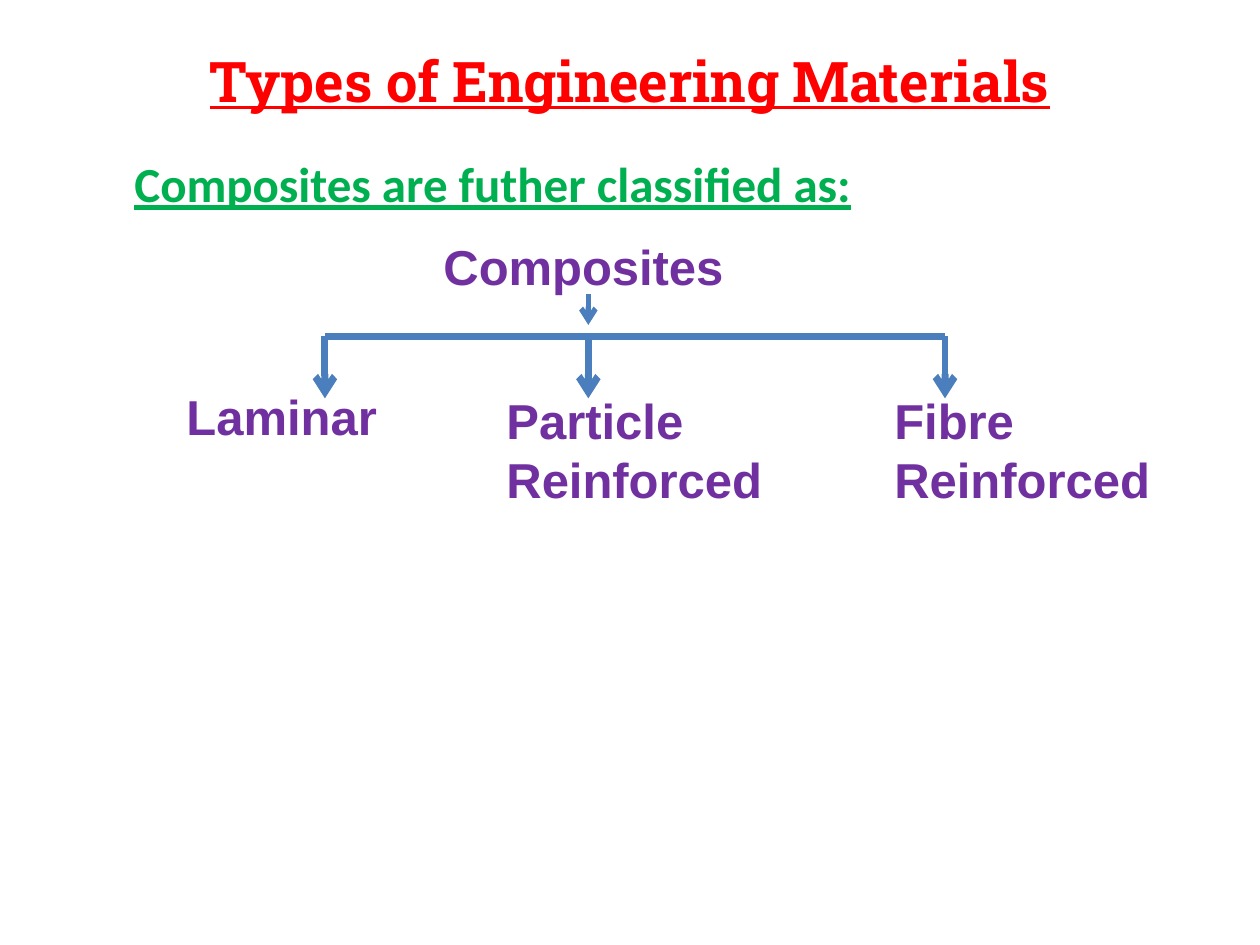
from dataclasses import dataclass

from pptx import Presentation
from pptx.dml.color import RGBColor
from pptx.enum.shapes import MSO_CONNECTOR
from pptx.enum.text import MSO_ANCHOR, PP_ALIGN
from pptx.oxml.ns import qn
from pptx.util import Cm, Pt
from lxml.etree import SubElement


@dataclass(frozen=True)
class Theme:
    title_color: RGBColor = RGBColor(0xFF, 0x00, 0x00)
    heading_color: RGBColor = RGBColor(0x00, 0xB0, 0x50)
    label_color: RGBColor = RGBColor(0x70, 0x30, 0xA0)
    line_color: RGBColor = RGBColor(0x4B, 0x7E, 0xBC)
    title_font: str = "Roboto Slab"
    heading_font: str = "Calibri"
    label_font: str = "Arial"
    title_size: int = 32
    text_size: int = 28
    branch_width: int = 4
    stem_width: int = 3


THEME = Theme()


def add_text(slide, lines, left, top, width, height, font=THEME.label_font,
             size=THEME.text_size, color=THEME.label_color, underline=False,
             align=PP_ALIGN.LEFT, anchor=MSO_ANCHOR.TOP):
    frame = slide.shapes.add_textbox(Cm(left), Cm(top), Cm(width), Cm(height)).text_frame
    frame.word_wrap = True
    frame.vertical_anchor = anchor
    frame.text = "\n".join(lines)
    for paragraph in frame.paragraphs:
        paragraph.alignment = align
        paragraph.font.name = font
        paragraph.font.size = Pt(size)
        paragraph.font.bold = True
        paragraph.font.underline = underline
        paragraph.font.color.rgb = color


def add_line(slide, x1, y1, x2, y2, width=THEME.branch_width, arrow=True):
    connector = slide.shapes.add_connector(
        MSO_CONNECTOR.STRAIGHT, Cm(x1), Cm(y1), Cm(x2), Cm(y2))
    connector.line.color.rgb = THEME.line_color
    connector.line.width = Pt(width)
    properties = connector._element.spPr
    if arrow:
        SubElement(properties.find(qn("a:ln")), qn("a:tailEnd"), type="arrow")
    SubElement(properties, qn("a:effectLst"))


def add_tree(slide):
    root_x, stem_top, stem_bottom = 11.86, 5.92, 6.55
    bar_y, arrow_end = 6.78, 8.03
    branches = [
        (6.55, ["Laminar"], 3.51, 7.67, 1.45),
        (root_x, ["Particle", "Reinforced"], 9.96, 7.75, 2.62),
        (19.05, ["Fibre Reinforced"], 17.78, 7.75, 2.62),
    ]
    add_text(slide, ["Composites"], 8.69, 4.65, 8.69, 1.45)
    add_line(slide, root_x, stem_top, root_x, stem_bottom, THEME.stem_width)
    add_line(slide, branches[0][0], bar_y, branches[-1][0], bar_y, arrow=False)
    for arrow_x, lines, left, top, height in branches:
        add_line(slide, arrow_x, bar_y, arrow_x, arrow_end)
        add_text(slide, lines, left, top, 6.99, height)


def main():
    deck = Presentation()
    deck.slide_width, deck.slide_height = Cm(25.4), Cm(19.05)
    slide = deck.slides.add_slide(deck.slide_layouts[6])
    add_text(slide, ["Types of Engineering Materials"], 1.27, 0.76, 22.86, 1.7,
             THEME.title_font, THEME.title_size, THEME.title_color, True,
             PP_ALIGN.CENTER, MSO_ANCHOR.MIDDLE)
    add_text(slide, ["Composites are futher classified as:"], 2.46, 2.97, 22.94, 1.45,
             THEME.heading_font, color=THEME.heading_color, underline=True)
    add_tree(slide)
    deck.save("out.pptx")


if __name__ == "__main__":
    main()
